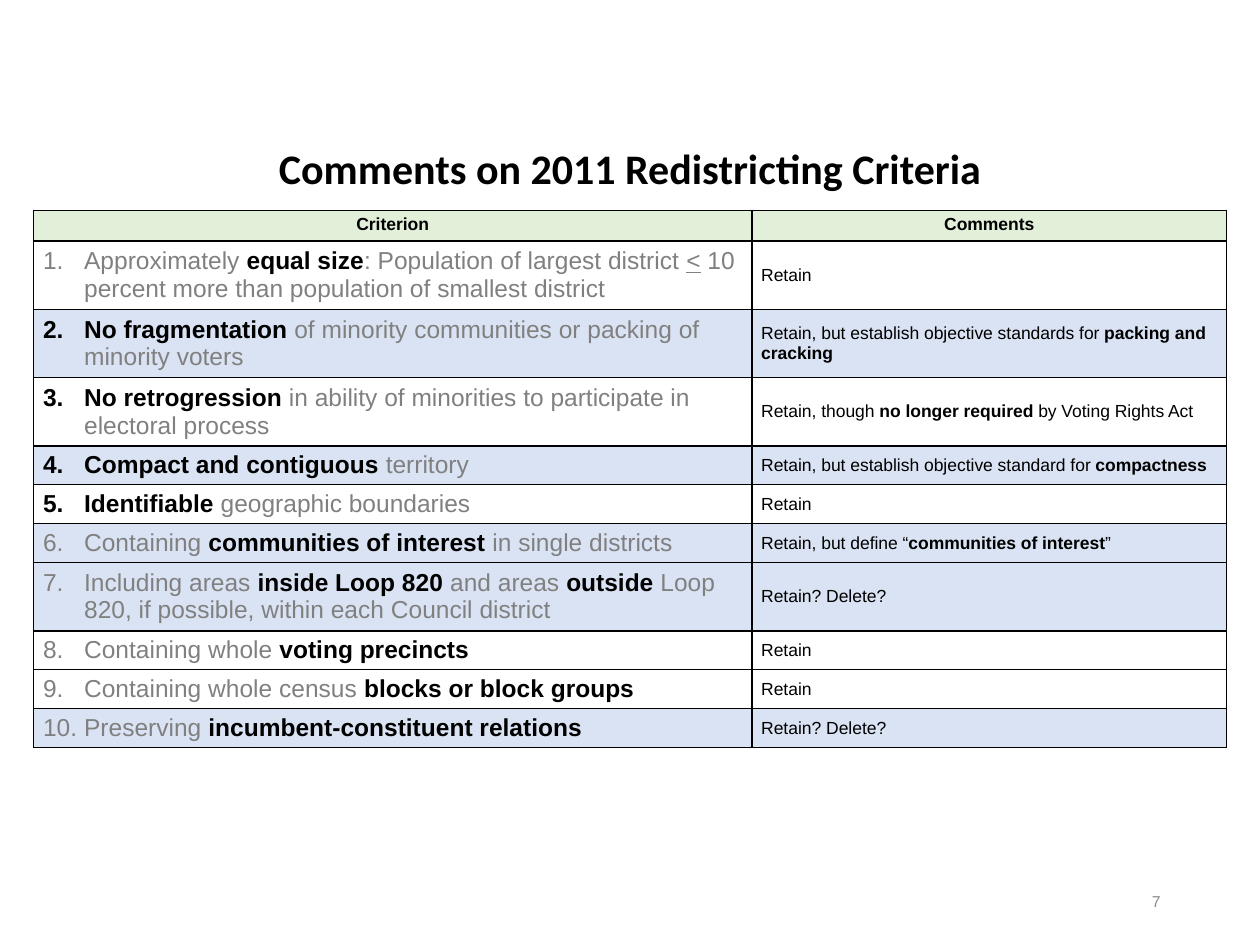
from lxml.etree import SubElement
from pptx import Presentation
from pptx.dml.color import RGBColor
from pptx.enum.text import MSO_ANCHOR, PP_ALIGN
from pptx.oxml.ns import qn
from pptx.util import Pt

BLACK, GREY, NUMBER_GREY = "000000", "808080", "8C8C8C"
GREEN, BLUE = "E2F0D9", "DAE3F3"
HEADER_HEIGHT, ONE_LINE, TWO_LINES = 17.5, 21.9, 37.8
NUMBER_INDENT = 23.5

HEADINGS = ["Criterion", "Comments"]
# Criterion, comment, row height, fill; *bold* and _underlined_ text is marked
CRITERIA = [
    ("1.\tApproximately *equal size*: Population of largest district _<_ 10 percent "
     "more than population of smallest district", "Retain", TWO_LINES, None),
    ("*2.\tNo fragmentation *of minority communities or packing of minority voters",
     "Retain, but establish objective standards for *packing and cracking*",
     TWO_LINES, BLUE),
    ("*3.\tNo retrogression *in ability of minorities to participate in electoral process",
     "Retain, though *no longer required *by Voting Rights Act", TWO_LINES, None),
    ("*4.\tCompact and contiguous *territory",
     "Retain, but establish objective standard for *compactness*", ONE_LINE, BLUE),
    ("*5.\tIdentifiable *geographic boundaries", "Retain", ONE_LINE, None),
    ("6.\tContaining *communities of interest *in single districts",
     "Retain, but define “*communities of interest*”", ONE_LINE, BLUE),
    ("7.\tIncluding areas *inside Loop 820 *and areas *outside *Loop 820, if possible, "
     "within each Council district", "Retain? Delete?", TWO_LINES, BLUE),
    ("8.\tContaining whole *voting precincts*", "Retain", ONE_LINE, None),
    ("9.\tContaining whole census *blocks or block groups*", "Retain", ONE_LINE, None),
    ("10.\tPreserving *incumbent-constituent relations*", "Retain? Delete?", ONE_LINE, BLUE),
]


def color(value):
    return RGBColor.from_string(value)


def write_text(frame, text, size, font="Arial", plain=BLACK, strong=BLACK,
               align=PP_ALIGN.LEFT, indent=0, line_spacing=None):
    """Write one paragraph, with *bold* and _underlined_ parts as runs."""
    frame.word_wrap = True
    paragraph = frame.paragraphs[0]
    paragraph.alignment = align
    if line_spacing:
        paragraph.line_spacing = line_spacing
    if indent:
        properties = paragraph._p.get_or_add_pPr()
        properties.set("marL", str(Pt(indent)))
        properties.set("indent", str(-Pt(indent)))
    for bold_index, part in enumerate(text.split("*")):
        for underline_index, piece in enumerate(part.split("_")):
            if not piece:
                continue
            run = paragraph.add_run()
            run.text = piece
            run.font.name, run.font.size = font, Pt(size)
            run.font.bold = bold_index % 2 == 1
            run.font.underline = underline_index % 2 == 1
            run.font.color.rgb = color(strong if run.font.bold else plain)


def add_text(slide, left, top, width, height, text, size, **text_format):
    shape = slide.shapes.add_textbox(Pt(left), Pt(top), Pt(width), Pt(height))
    shape.text_frame.vertical_anchor = MSO_ANCHOR.MIDDLE
    write_text(shape.text_frame, text, size, **text_format)


def format_cell(cell, fill, anchor):
    cell.margin_left = cell.margin_right = Pt(5.4)
    cell.margin_top = cell.margin_bottom = Pt(2.7)
    cell.vertical_anchor = anchor
    properties = cell._tc.get_or_add_tcPr()
    for side in ("lnL", "lnR", "lnT", "lnB"):
        line = SubElement(properties, qn(f"a:{side}"), w=str(Pt(1)))
        solid = SubElement(line, qn("a:solidFill"))
        SubElement(solid, qn("a:srgbClr"), val=BLACK)
    if fill:
        cell.fill.solid()
        cell.fill.fore_color.rgb = color(fill)
    else:
        cell.fill.background()


def add_criteria_table(slide, left, top, column_widths):
    heights = [HEADER_HEIGHT] + [height for _, _, height, _ in CRITERIA]
    table = slide.shapes.add_table(
        len(heights), len(column_widths), Pt(left), Pt(top),
        Pt(sum(column_widths)), Pt(sum(heights))).table
    table.first_row = table.horz_banding = False
    for column, width in zip(table.columns, column_widths):
        column.width = Pt(width)
    for row, height in zip(table.rows, heights):
        row.height = Pt(height)

    # Header row
    for index, heading in enumerate(HEADINGS):
        cell = table.cell(0, index)
        format_cell(cell, GREEN, MSO_ANCHOR.TOP)
        write_text(cell.text_frame, f"*{heading}*", 10, align=PP_ALIGN.CENTER)

    # One row for each criterion
    for index, (criterion, comment, _, fill) in enumerate(CRITERIA, start=1):
        criterion_cell, comment_cell = table.cell(index, 0), table.cell(index, 1)
        for cell in (criterion_cell, comment_cell):
            format_cell(cell, fill, MSO_ANCHOR.MIDDLE)
        write_text(criterion_cell.text_frame, criterion, 14, plain=GREY,
                   indent=NUMBER_INDENT)
        write_text(comment_cell.text_frame, comment, 10)


def add_criteria_slide(presentation):
    slide = presentation.slides.add_slide(presentation.slide_layouts[6])
    left, column_widths = 19.2, (410.4, 271.4)
    # Title
    add_text(slide, left, 83.5, sum(column_widths), 28,
             "*Comments on 2011 Redistricting Criteria*", 24, font="Calibri",
             align=PP_ALIGN.CENTER, line_spacing=0.9)
    # Criteria and comments
    add_criteria_table(slide, left, 120.2, column_widths)
    # Slide number
    add_text(slide, 508.3, 500.4, 162, 28.8, "7", 9, plain=NUMBER_GREY,
             align=PP_ALIGN.RIGHT)


def main():
    presentation = Presentation()
    presentation.slide_width, presentation.slide_height = Pt(720), Pt(540)
    add_criteria_slide(presentation)
    presentation.save("out.pptx")


if __name__ == "__main__":
    main()
